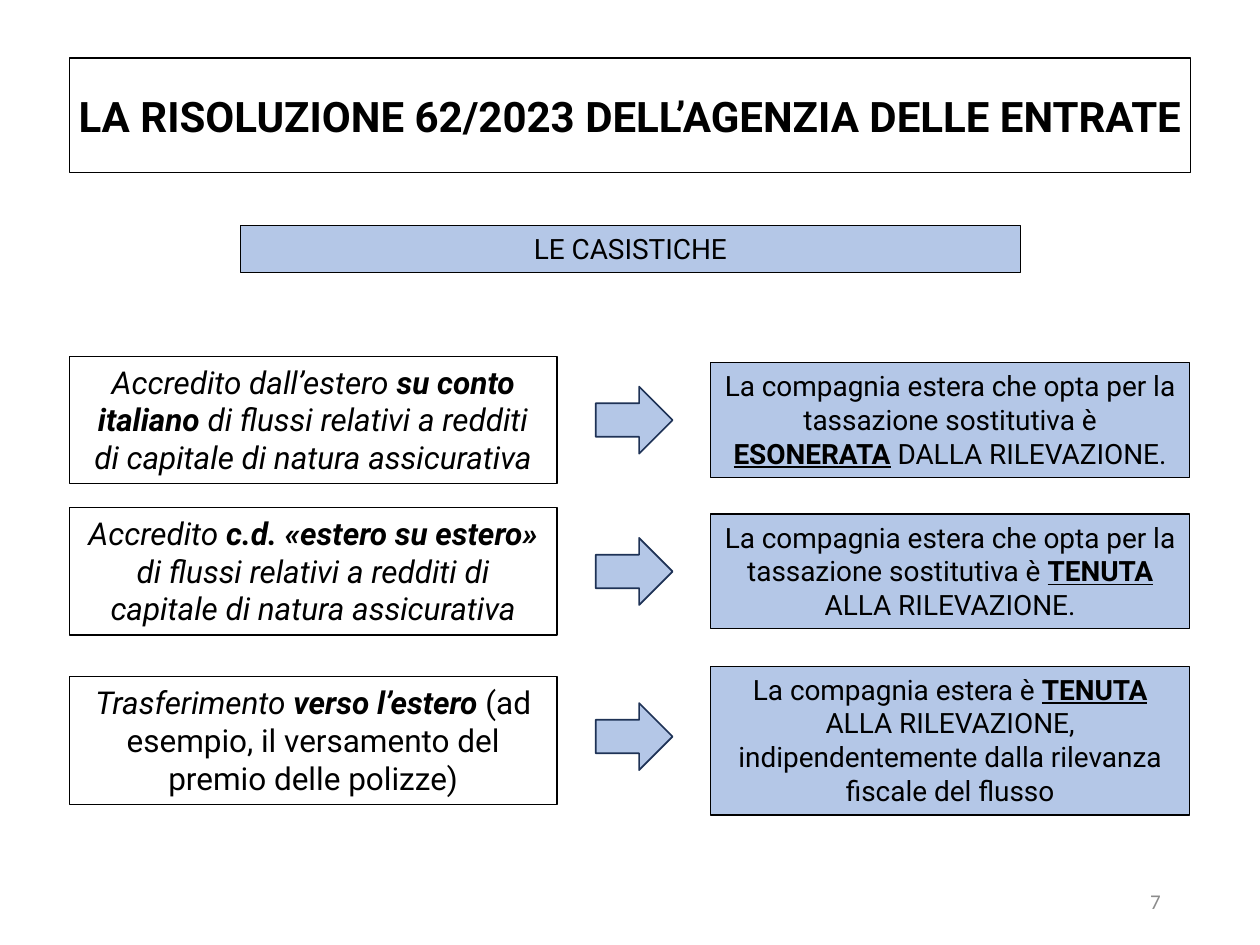
from pptx import Presentation
from pptx.dml.color import RGBColor
from pptx.enum import shapes, text
from pptx.util import Cm, Pt

BLACK = RGBColor(0x00, 0x00, 0x00)
WHITE = RGBColor(0xFF, 0xFF, 0xFF)
BLUE = RGBColor(0xB4, 0xC7, 0xE7)
NAVY = RGBColor(0x1E, 0x32, 0x56)
GREY = RGBColor(0x8C, 0x8C, 0x8C)

TITLE = "LA RISOLUZIONE 62/2023 DELL’AGENZIA DELLE ENTRATE"
SUBTITLE = "LE CASISTICHE"
PAGE_NUMBER = "7"

# Runs are (text, style): b bold, i italic, u underlined
# Each row: centre of the boxes, centre of the arrow, height of the outcome, case, outcome
ROWS = [
    (8.47, 8.47, 2.31,
     [("Accredito dall’estero ", "i"), ("su conto italiano ", "bi"),
      ("di flussi relativi a redditi di capitale di natura assicurativa", "i")],
     [("La compagnia estera che opta per la tassazione sostitutiva è ", ""),
      ("ESONERATA", "bu"), (" DALLA RILEVAZIONE.", "")]),
    (11.52, 11.52, 2.31,
     [("Accredito ", "i"), ("c.d. «estero su estero» ", "bi"),
      ("di flussi relativi a redditi di capitale di natura assicurativa", "i")],
     [("La compagnia estera che opta per la tassazione sostitutiva è ", ""),
      ("TENUTA ", "bu"), ("ALLA RILEVAZIONE.", "")]),
    (14.93, 14.85, 3.0,
     [("Trasferimento ", "i"), ("verso l’estero ", "bi"),
      ("(ad esempio, il versamento del premio delle polizze)", "")],
     [("La compagnia estera è ", ""), ("TENUTA ", "bu"),
      ("ALLA RILEVAZIONE, indipendentemente dalla rilevanza fiscale del flusso", "")]),
]

LEFT, CASE_W, CASE_H = 1.4, 9.83, 2.57
OUTCOME_X, OUTCOME_W = 14.33, 9.65
ARROW_X, ARROW_W, ARROW_H = 12.01, 1.55, 1.35


def place(sp, x, y, w, h):
    sp.left, sp.top, sp.width, sp.height = Cm(x), Cm(y), Cm(w), Cm(h)


def paint(sp, fill, line, width):
    if fill is None:
        sp.fill.background()
    else:
        sp.fill.solid()
        sp.fill.fore_color.rgb = fill
    sp.line.color.rgb = line
    sp.line.width = Pt(width)


def write(sp, runs, size, color=BLACK, font="Roboto", align=text.PP_ALIGN.CENTER):
    sp.text_frame.word_wrap = True
    p = sp.text_frame.paragraphs[0]
    p.alignment = align
    for content, style in runs:
        r = p.add_run()
        r.text = content
        r.font.name, r.font.size = font, Pt(size)
        r.font.color.rgb = color
        r.font.bold, r.font.italic, r.font.underline = (k in style for k in "biu")


def add_shape(s, kind, x, y, w, h, fill, line=BLACK, width=0.75):
    sp = s.shapes.add_shape(kind, Cm(x), Cm(y), Cm(w), Cm(h))
    sp.shadow.inherit = False
    paint(sp, fill, line, width)
    return sp


def add_box(s, x, y, w, h, fill, runs, size):
    sp = add_shape(s, shapes.MSO_SHAPE.RECTANGLE, x, y, w, h, fill)
    write(sp, runs, size)
    sp.text_frame.vertical_anchor = text.MSO_ANCHOR.TOP
    sp.text_frame.auto_size = text.MSO_AUTO_SIZE.SHAPE_TO_FIT_TEXT


def add_row(s, middle, arrow_middle, outcome_h, case, outcome):
    add_box(s, LEFT, middle - CASE_H / 2, CASE_W, CASE_H, None, case, 18)
    add_box(s, OUTCOME_X, middle - outcome_h / 2, OUTCOME_W, outcome_h, BLUE, outcome, 16)
    add_shape(s, shapes.MSO_SHAPE.RIGHT_ARROW, ARROW_X, arrow_middle - ARROW_H / 2,
              ARROW_W, ARROW_H, BLUE, NAVY, 1)


def main():
    prs = Presentation()
    prs.slide_width, prs.slide_height = Cm(25.4), Cm(19.05)
    s = prs.slides.add_slide(prs.slide_layouts[5])

    title = s.shapes.title
    place(title, LEFT, 1.17, 22.6, 2.31)
    paint(title, WHITE, BLACK, 1)
    write(title, [(TITLE, "b")], 24)
    tf = title.text_frame
    tf.auto_size = text.MSO_AUTO_SIZE.NONE
    tf.vertical_anchor = text.MSO_ANCHOR.MIDDLE
    tf.margin_left = tf.margin_right = tf.margin_top = tf.margin_bottom = Cm(0.13)

    add_box(s, 4.85, 4.55, 15.72, 0.94, BLUE, [(SUBTITLE, "")], 16)
    for row in ROWS:
        add_row(s, *row)

    number = s.shapes.add_textbox(Cm(17.93), Cm(17.65), Cm(5.72), Cm(1.02))
    write(number, [(PAGE_NUMBER, "")], 12, GREY, "Calibri", text.PP_ALIGN.RIGHT)
    number.text_frame.vertical_anchor = text.MSO_ANCHOR.MIDDLE

    prs.save("out.pptx")


if __name__ == "__main__":
    main()
